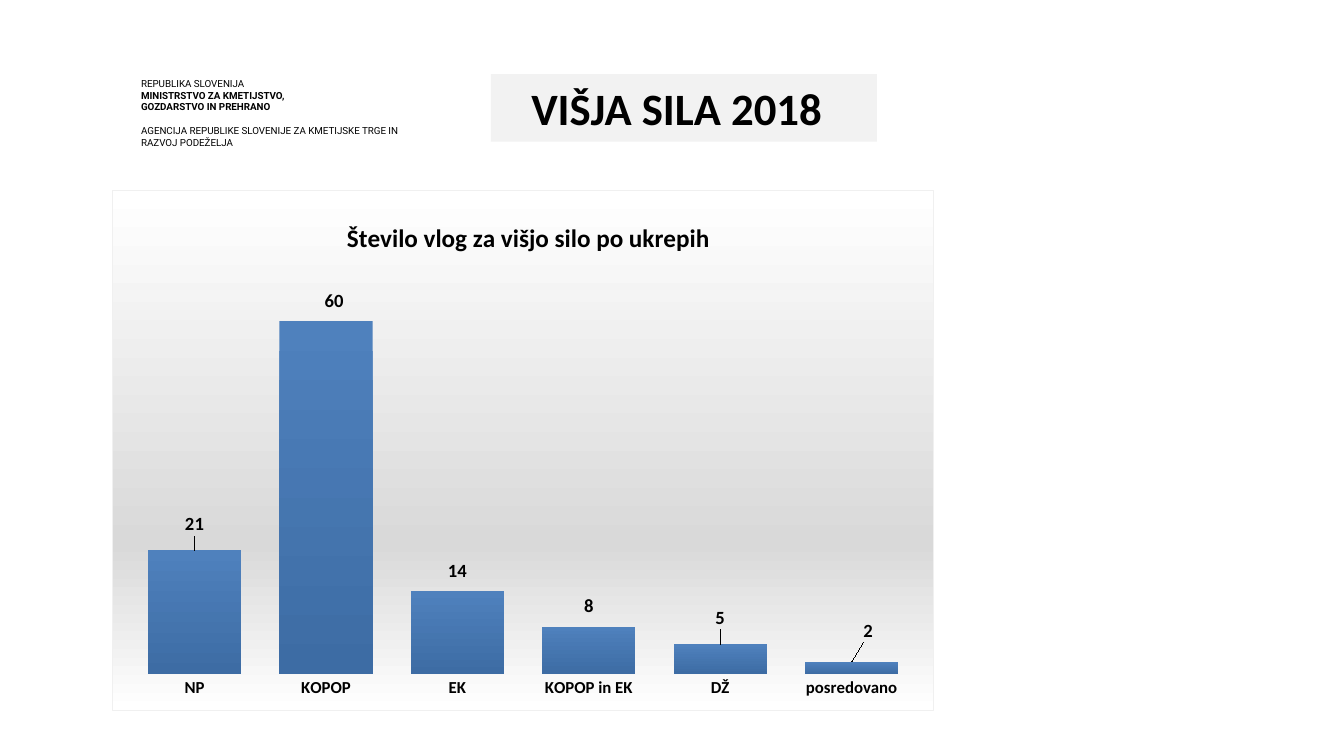
from dataclasses import dataclass

from lxml import etree
from pptx import Presentation
from pptx.chart.data import CategoryChartData
from pptx.dml.color import RGBColor
from pptx.enum.chart import XL_CHART_TYPE as ChartType
from pptx.enum.chart import XL_LABEL_POSITION as LabelPos
from pptx.enum.chart import XL_TICK_MARK as TickMark
from pptx.enum.shapes import MSO_SHAPE as Shape
from pptx.enum.text import MSO_ANCHOR as Anchor
from pptx.enum.text import PP_ALIGN as Align
from pptx.oxml import parse_xml
from pptx.oxml.ns import nsdecls, qn
from pptx.util import Pt


@dataclass(frozen=True)
class Theme:
    ink: str = "000000"
    panel: str = "F2F2F2"
    border: str = "F0F0F0"
    chart_stops: tuple = ((0, "FFFFFF"), (68, "D9D9D9"), (100, "FFFFFF"))
    bar_stops: tuple = ("4F81BD", "3D6CA4")
    body: str = "Calibri"
    letterhead: str = "Roboto"
    heading: float = 32
    chart_title: float = 18
    value: float = 13.3
    category: float = 12
    small: float = 7
    leading: float = 8.4


THEME = Theme()

LETTERHEAD = [
    ("REPUBLIKA SLOVENIJA", False, 0),
    ("MINISTRSTVO ZA KMETIJSTVO,", True, 0),
    ("GOZDARSTVO IN PREHRANO", True, 0),
    ("AGENCIJA REPUBLIKE SLOVENIJE ZA KMETIJSKE TRGE IN RAZVOJ PODEŽELJA",
     False, THEME.leading),
]

# measure, applications, label shift as fractions of the chart
MEASURES = [
    ("NP", 21, 0, -0.02),
    ("KOPOP", 60, 0.01, -0.01),
    ("EK", 14, 0, -0.01),
    ("KOPOP in EK", 8, 0, -0.01),
    ("DŽ", 5, 0, -0.02),
    ("posredovano", 2, 0.02, -0.03),
]


def style_font(font, size, name=THEME.body, bold=True, color=THEME.ink):
    font.size, font.name, font.bold = Pt(size), name, bold
    font.color.rgb = RGBColor.from_string(color)


def add_text(p, text, align=Align.LEFT, leading=None, before=0, **font):
    p.alignment = align
    if leading:
        p.line_spacing = Pt(leading)
    if before:
        p.space_before = Pt(before)
    r = p.add_run()
    r.text = text
    style_font(r.font, **font)


def add_letterhead(s):
    tf = s.shapes.add_textbox(Pt(100.8), Pt(55.4), Pt(189.4), Pt(48.2)).text_frame
    tf.word_wrap = True
    tf.margin_left = tf.margin_top = tf.margin_right = tf.margin_bottom = 0
    for i, (text, bold, before) in enumerate(LETTERHEAD):
        p = tf.add_paragraph() if i else tf.paragraphs[0]
        add_text(p, text, leading=THEME.leading, before=before, bold=bold,
                 size=THEME.small, name=THEME.letterhead)


def add_heading(s):
    sp = s.shapes.add_shape(Shape.RECTANGLE, Pt(350.6), Pt(53), Pt(275.8), Pt(48.2))
    sp.shadow.inherit = False
    sp.fill.solid()
    sp.fill.fore_color.rgb = RGBColor.from_string(THEME.panel)
    sp.line.fill.background()
    tf = sp.text_frame
    tf.margin_left = Pt(28.9)
    tf.vertical_anchor = Anchor.MIDDLE
    add_text(tf.paragraphs[0], "VIŠJA SILA 2018", size=THEME.heading)


def manual_layout(x, y, target=None, **extent):
    """Build a c:layout; a target makes x and y edges, otherwise shifts."""
    layout = etree.Element(qn("c:layout"))
    manual = etree.SubElement(layout, qn("c:manualLayout"))
    values = {}
    if target:
        if target == "inner":
            values["layoutTarget"] = target
        values.update(xMode="edge", yMode="edge")
    values.update(x=x, y=y, **extent)
    for tag, value in values.items():
        etree.SubElement(manual, qn(f"c:{tag}")).set("val", str(value))
    return layout


def set_layout(parent, layout, after=None):
    for old in parent.findall(qn("c:layout")):
        parent.remove(old)
    if after is None:
        parent.insert(0, layout)
    else:
        parent.find(qn(after)).addnext(layout)


def fill_chart_area(chart):
    stops = "".join(
        f'<a:gs pos="{pos * 1000}"><a:srgbClr val="{color}"/></a:gs>'
        for pos, color in THEME.chart_stops)
    area = parse_xml(
        f'<c:spPr {nsdecls("c", "a")}><a:gradFill><a:gsLst>{stops}</a:gsLst>'
        f'<a:lin ang="5400000" scaled="0"/></a:gradFill><a:ln w="{Pt(0.75)}">'
        f'<a:solidFill><a:srgbClr val="{THEME.border}"/></a:solidFill></a:ln></c:spPr>')
    chart.element.find(qn("c:chart")).addnext(area)


def style_axes(chart):
    axis = chart.category_axis
    axis.major_tick_mark = axis.minor_tick_mark = TickMark.NONE
    axis.format.line.fill.background()
    style_font(axis.tick_labels.font, THEME.category)
    axis = chart.value_axis
    axis.minimum_scale, axis.maximum_scale = 0, 70
    axis.has_major_gridlines = False
    axis.visible = False


def style_bars(plot):
    plot.gap_width = 41
    plot.vary_by_categories = False
    series = plot.series[0]
    fill = series.format.fill
    fill.gradient()
    fill.gradient_angle = 270
    for stop, color in zip(fill.gradient_stops, THEME.bar_stops):
        stop.color.rgb = RGBColor.from_string(color)
    for i, (_, _, dx, dy) in enumerate(MEASURES):
        label = series.points[i].data_label
        style_font(label.font, THEME.value)
        label.position = LabelPos.OUTSIDE_END
    labels = series.data_labels
    labels.show_value = True
    style_font(labels.font, THEME.value)
    for item, (_, _, dx, dy) in zip(labels._element.findall(qn("c:dLbl")), MEASURES):
        set_layout(item, manual_layout(dx, dy), after="c:idx")


def add_measures_chart(s):
    data = CategoryChartData()
    data.categories = [m[0] for m in MEASURES]
    data.add_series("Series 1", [m[1] for m in MEASURES])
    chart = s.shapes.add_chart(ChartType.COLUMN_CLUSTERED, Pt(79.9), Pt(135.4),
                               Pt(587.5), Pt(372.2), data).chart
    style_font(chart.font, THEME.category)
    chart.has_legend = False
    chart.has_title = True
    title = chart.chart_title
    add_text(title.text_frame.paragraphs[0], "Število vlog za višjo silo po ukrepih",
             align=Align.CENTER, size=THEME.chart_title)
    body = chart.element.find(qn("c:chart"))
    set_layout(body.find(qn("c:title")), manual_layout(0.28, 0.05, "outer"), after="c:tx")
    set_layout(body.find(qn("c:plotArea")),
               manual_layout(0.02, 0.14, "inner", w=0.96, h=0.79))
    fill_chart_area(chart)
    style_axes(chart)
    style_bars(chart.plots[0])


def main():
    prs = Presentation()
    prs.slide_width, prs.slide_height = Pt(960), Pt(540)
    s = prs.slides.add_slide(prs.slide_layouts[6])
    add_letterhead(s)
    add_heading(s)
    add_measures_chart(s)
    prs.save("out.pptx")


if __name__ == "__main__":
    main()
